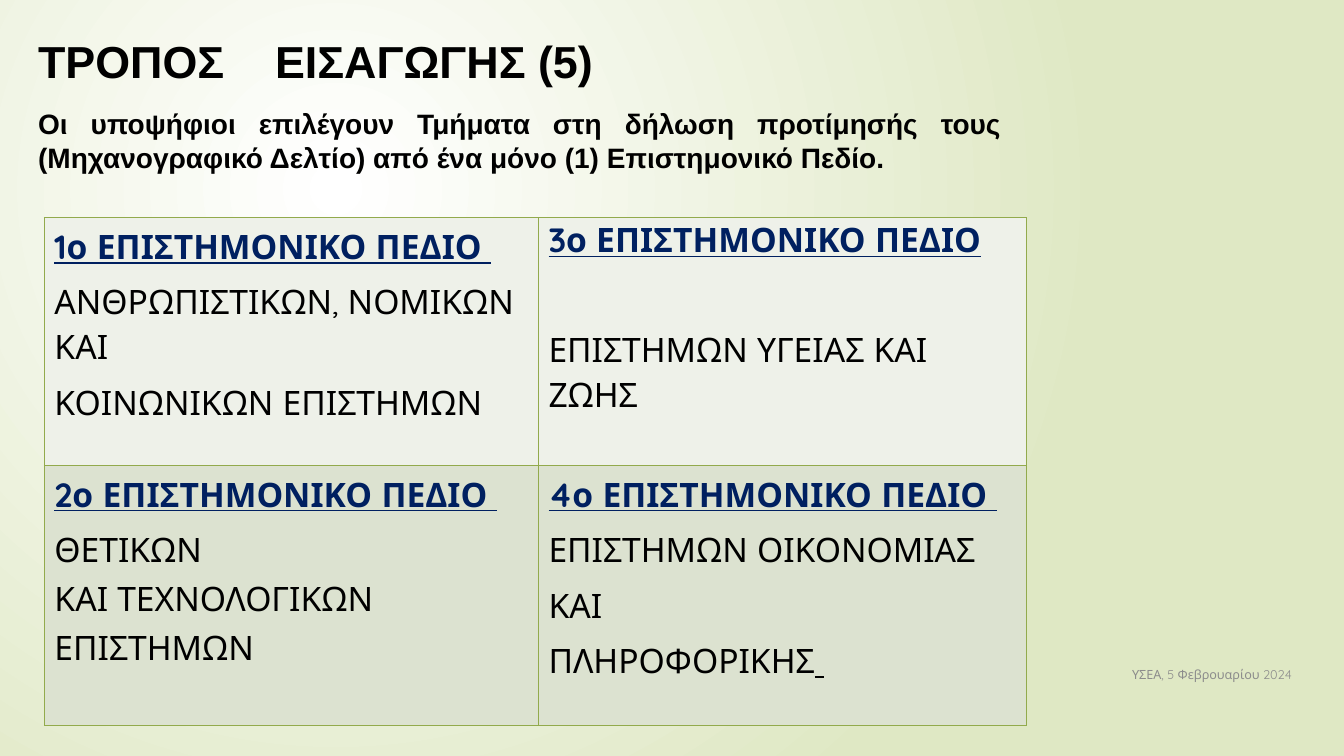
"""Build the slide listing the four scientific fields for university entry."""
from lxml.etree import SubElement
from pptx import Presentation
from pptx.dml.color import RGBColor
from pptx.enum.text import MSO_ANCHOR, PP_ALIGN
from pptx.oxml.ns import qn
from pptx.util import Inches, Pt

COLORS = {
    "text": "000000", "heading": "002060", "footer": "8C8C8C", "border": "92AA4C",
    "center": "FFFFFF", "edge": "DFE8C4", "upper": "EEF1E9", "lower": "DCE2D0",
}
TITLE = "ΤΡΟΠΟΣ\tΕΙΣΑΓΩΓΗΣ (5)"
INTRO = ("Οι υποψήφιοι επιλέγουν Τμήματα στη δήλωση προτίμησής τους "
         "(Μηχανογραφικό Δελτίο) από ένα μόνο (1) Επιστημονικό Πεδίο.")
FOOTER = "ΥΣΕΑ, 5 Φεβρουαρίου 2024"
WIDE, TIGHT = 1.07, 0.9
GAP, LARGE_GAP = 7.5, 47
FIELDS = [
    [
        [("1ο ΕΠΙΣΤΗΜΟΝΙΚΟ ΠΕΔΙΟ ", WIDE, 0),
         ("ΑΝΘΡΩΠΙΣΤΙΚΩΝ, ΝΟΜΙΚΩΝ ΚΑΙ", WIDE, GAP),
         ("ΚΟΙΝΩΝΙΚΩΝ ΕΠΙΣΤΗΜΩΝ", WIDE, GAP)],
        [("3ο ΕΠΙΣΤΗΜΟΝΙΚΟ ΠΕΔΙΟ", TIGHT, 0),
         ("ΕΠΙΣΤΗΜΩΝ ΥΓΕΙΑΣ ΚΑΙ ΖΩΗΣ", WIDE, LARGE_GAP)],
    ],
    [
        [("2ο ΕΠΙΣΤΗΜΟΝΙΚΟ ΠΕΔΙΟ ", WIDE, 0),
         ("ΘΕΤΙΚΩΝ", WIDE, GAP),
         ("ΚΑΙ ΤΕΧΝΟΛΟΓΙΚΩΝ", TIGHT, GAP),
         ("ΕΠΙΣΤΗΜΩΝ", TIGHT, GAP)],
        [("4ο ΕΠΙΣΤΗΜΟΝΙΚΟ ΠΕΔΙΟ ", WIDE, 0),
         ("ΕΠΙΣΤΗΜΩΝ ΟΙΚΟΝΟΜΙΑΣ", WIDE, GAP),
         ("ΚΑΙ", WIDE, GAP),
         ("ΠΛΗΡΟΦΟΡΙΚΗΣ", WIDE, GAP)],
    ],
]
COLUMN_WIDTHS = [4.9, 4.84]
ROW_HEIGHTS = [2.46, 2.58]
ROW_FILLS = ["upper", "lower"]


def rgb(name):
    return RGBColor.from_string(COLORS[name])


def set_font(font, name, size, color, bold=False):
    font.name, font.size, font.bold = name, Pt(size), bold
    font.color.rgb = rgb(color)


def add_text(slide, box, text, font, tab=None):
    shape = slide.shapes.add_textbox(*map(Inches, box))
    frame = shape.text_frame
    frame.word_wrap = True
    paragraph = frame.paragraphs[0]
    paragraph.text = text
    if tab:
        tabs = SubElement(paragraph._p.get_or_add_pPr(), qn("a:tabLst"))
        SubElement(tabs, qn("a:tab"), pos=str(Inches(tab)), algn="l")
    set_font(paragraph.font, *font)
    return frame


def add_borders(cell):
    properties = cell._tc.get_or_add_tcPr()
    for index, side in enumerate(("lnL", "lnR", "lnT", "lnB")):
        line = properties.makeelement(qn(f"a:{side}"), {"w": str(Pt(1))})
        fill = SubElement(line, qn("a:solidFill"))
        SubElement(fill, qn("a:srgbClr"), val=COLORS["border"])
        properties.insert(index, line)


def fill_cell(cell, lines, fill):
    cell.fill.solid()
    cell.fill.fore_color.rgb = rgb(fill)
    add_borders(cell)
    frame = cell.text_frame
    for index, (text, spacing, gap) in enumerate(lines):
        heading = index == 0
        paragraph = frame.paragraphs[0] if heading else frame.add_paragraph()
        paragraph.text = text
        paragraph.line_spacing = spacing
        paragraph.space_before = Pt(gap)
        set_font(paragraph.font, "Quicksand", 24, "heading" if heading else "text", heading)
        paragraph.font.underline = heading
    return paragraph


def add_fields(slide):
    size = map(Inches, (0.44, 2.16, sum(COLUMN_WIDTHS), sum(ROW_HEIGHTS)))
    table = slide.shapes.add_table(len(ROW_HEIGHTS), len(COLUMN_WIDTHS), *size).table
    for column, width in zip(table.columns, COLUMN_WIDTHS):
        column.width = Inches(width)
    for row, height, fields, fill in zip(table.rows, ROW_HEIGHTS, FIELDS, ROW_FILLS):
        row.height = Inches(height)
        for cell, lines in zip(row.cells, fields):
            last = fill_cell(cell, lines, fill)
    underlined = last.add_run()
    underlined.text = " "
    underlined.font.underline = True


def paint_background(slide):
    fill = slide.background.fill
    fill.gradient()
    for stop, color in zip(fill.gradient_stops, ("center", "edge")):
        stop.color.rgb = rgb(color)
    gradient = slide.element.find(f".//{qn('a:gradFill')}")
    gradient.remove(gradient.find(qn("a:lin")))
    circle = gradient.makeelement(qn("a:path"), {"path": "circle"})
    gradient.find(qn("a:gsLst")).addnext(circle)
    SubElement(circle, qn("a:fillToRect"), l="50000", t="50000", r="100000", b="100000")


def main():
    presentation = Presentation()
    presentation.slide_width, presentation.slide_height = Inches(13.33), Inches(7.5)
    slide = presentation.slides.add_slide(presentation.slide_layouts[6])
    paint_background(slide)
    add_text(slide, (0.28, 0.29, 11.59, 0.6), TITLE, ("Arial", 32, "text", True), 2.35)
    footer = add_text(slide, (11.13, 6.59, 2.2, 0.2), FOOTER, ("Quicksand", 9, "footer"))
    footer.vertical_anchor = MSO_ANCHOR.MIDDLE
    add_fields(slide)
    intro = add_text(slide, (0.28, 1.01, 9.75, 0.77), INTRO, ("Arial", 20, "text", True))
    intro.paragraphs[0].alignment = PP_ALIGN.JUSTIFY
    presentation.save("out.pptx")


if __name__ == "__main__":
    main()
